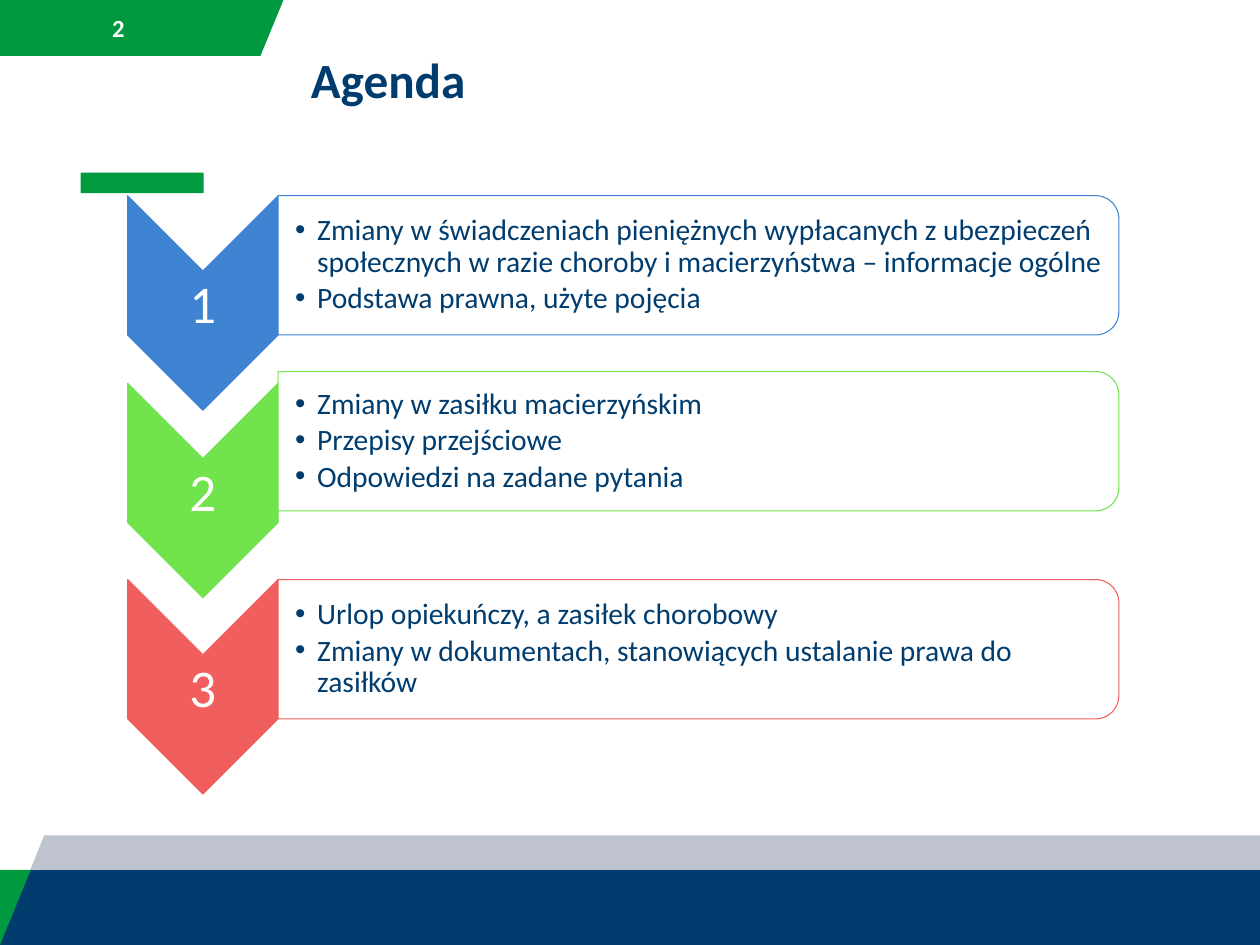
from dataclasses import dataclass

import lxml.etree
import pptx
import pptx.dml.color
import pptx.enum.shapes
import pptx.enum.text
import pptx.oxml.ns
import pptx.util

Pt = pptx.util.Pt
qn = pptx.oxml.ns.qn
SHAPE = pptx.enum.shapes.MSO_SHAPE
ALIGN = pptx.enum.text.PP_ALIGN
ANCHOR = pptx.enum.text.MSO_ANCHOR


@dataclass(frozen=True)
class Theme:
    font: str = "Calibri"
    navy: str = "003D6E"
    green: str = "00993F"
    accent: str = "029A3F"
    grey: str = "BEC3CE"
    white: str = "FFFFFF"
    steps: tuple = ("3F84D2", "70E34D", "F05E5E")
    title: int = 40
    number: int = 43
    bullet: int = 24
    page: int = 20


theme = Theme()


def paint(shape, fill, line=None):
    shape.shadow.inherit = False
    shape.fill.solid()
    shape.fill.fore_color.rgb = pptx.dml.color.RGBColor.from_string(fill)
    if line:
        shape.line.color.rgb = pptx.dml.color.RGBColor.from_string(line)
        shape.line.width = Pt(0.85)
    else:
        shape.line.fill.background()


def write(box, place, lines, size, color, bold=False, align=ALIGN.LEFT, insets=(2, 2, 2, 2), bullets=False):
    box.left, box.top, box.width, box.height = (Pt(value) for value in place)
    frame = box.text_frame
    frame.word_wrap = True
    frame.auto_size = pptx.enum.text.MSO_AUTO_SIZE.NONE
    frame.vertical_anchor = ANCHOR.MIDDLE
    frame.margin_left, frame.margin_top, frame.margin_right, frame.margin_bottom = (Pt(value) for value in insets)
    frame.text = "\n".join(lines)
    for paragraph in frame.paragraphs:
        paragraph.alignment = align
        paragraph.space_before = Pt(0)
        if bullets:
            paragraph.line_spacing = 0.9
            paragraph.space_after = Pt(3.6)
            properties = paragraph._p.get_or_add_pPr()
            properties.set("marL", str(Pt(18)))
            properties.set("indent", str(-Pt(18)))
            lxml.etree.SubElement(properties, qn("a:buFont")).set("typeface", "Arial")
            lxml.etree.SubElement(properties, qn("a:buChar")).set("char", "•")
        paragraph.font.name = theme.font
        paragraph.font.size = Pt(size)
        paragraph.font.bold = bold
        paragraph.font.color.rgb = pptx.dml.color.RGBColor.from_string(color)


WIDTH, HEIGHT = 1024, 768
deck = pptx.Presentation()
deck.slide_width, deck.slide_height = Pt(WIDTH), Pt(HEIGHT)
slide = deck.slides.add_slide(deck.slide_layouts[4])
shapes = slide.shapes
agenda, *topic_lists, spare = slide.placeholders
spare._element.getparent().remove(spare._element)

BAND_TOP = 707
outlines = [
    (theme.green, [(0, 0), (230.4, 0), (211.7, 45.4), (0, 45.4)]),
    (theme.grey, [(0, HEIGHT), (36, 679), (WIDTH, 679), (WIDTH, HEIGHT)]),
    (theme.navy, [(0, BAND_TOP), (WIDTH, BAND_TOP), (WIDTH, HEIGHT), (0, HEIGHT)]),
    (theme.green, [(0, BAND_TOP), (25, BAND_TOP), (0, HEIGHT)]),
]
for color, points in outlines:
    start, *corners = [(Pt(x), Pt(y)) for x, y in points]
    builder = shapes.build_freeform(*start)
    builder.add_line_segments(corners, close=True)
    paint(builder.convert_to_shape(), color)

accent_bar = shapes.add_shape(SHAPE.RECTANGLE, Pt(65.5), Pt(140.4), Pt(100), Pt(16.6))
paint(accent_bar, theme.accent)

page_number = shapes.add_textbox(0, 0, 0, 0)
write(page_number, (65.5, 6.5, 61.2, 32.4), ["2"], theme.page, theme.white, True, ALIGN.CENTER)
write(agenda, (245.5, 32.4, 567.4, 62.6), ["Agenda"], theme.title, theme.navy, True, insets=(7.2, 3.6, 7.2, 3.6))

CHEVRON_LEFT, CHEVRON_WIDTH, CHEVRON_HEIGHT = 103.7, 122.4, 174.4
PANEL_LEFT = CHEVRON_LEFT + CHEVRON_WIDTH
PANEL_WIDTH, PANEL_HEIGHT = 683.2, 113.2
steps = [
    (159, 159, [
        "Zmiany w świadczeniach pieniężnych wypłacanych z ubezpieczeń społecznych w razie choroby i macierzyństwa – informacje ogólne",
        "Podstawa prawna, użyte pojęcia",
    ]),
    (311.5, 302, [
        "Zmiany w zasiłku macierzyńskim",
        "Przepisy przejściowe",
        "Odpowiedzi na zadane pytania",
    ]),
    (471, 471, [
        "Urlop opiekuńczy, a zasiłek chorobowy",
        "Zmiany w dokumentach, stanowiących ustalanie prawa do zasiłków",
    ]),
]
for number, (step, color, topics) in enumerate(zip(steps, theme.steps, topic_lists), 1):
    chevron_top, panel_top, lines = step
    turned = [
        (SHAPE.CHEVRON, CHEVRON_LEFT, chevron_top, CHEVRON_WIDTH, CHEVRON_HEIGHT, color),
        (SHAPE.ROUND_2_SAME_RECTANGLE, PANEL_LEFT, panel_top, PANEL_WIDTH, PANEL_HEIGHT, theme.white),
    ]
    for preset, left, top, width, height, fill in turned:
        shift = (width - height) / 2
        panel = shapes.add_shape(preset, Pt(left + shift), Pt(top - shift), Pt(height), Pt(width))
        panel.rotation = 90
        paint(panel, fill, color)
    panel_color = panel._element.spPr.find(qn("a:solidFill")).find(qn("a:srgbClr"))
    lxml.etree.SubElement(panel_color, qn("a:alpha")).set("val", "90000")

    step_number = shapes.add_textbox(0, 0, 0, 0)
    write(step_number, (CHEVRON_LEFT, chevron_top + 60.6, CHEVRON_WIDTH, 52.6), [str(number)],
          theme.number, theme.white, align=ALIGN.CENTER)
    panel._element.addnext(topics._element)
    write(topics, (PANEL_LEFT, panel_top + 5.5, 677.5, 102.2), lines, theme.bullet, theme.navy,
          insets=(13.7, 1.4, 1.4, 1.4), bullets=True)

deck.save("out.pptx")
